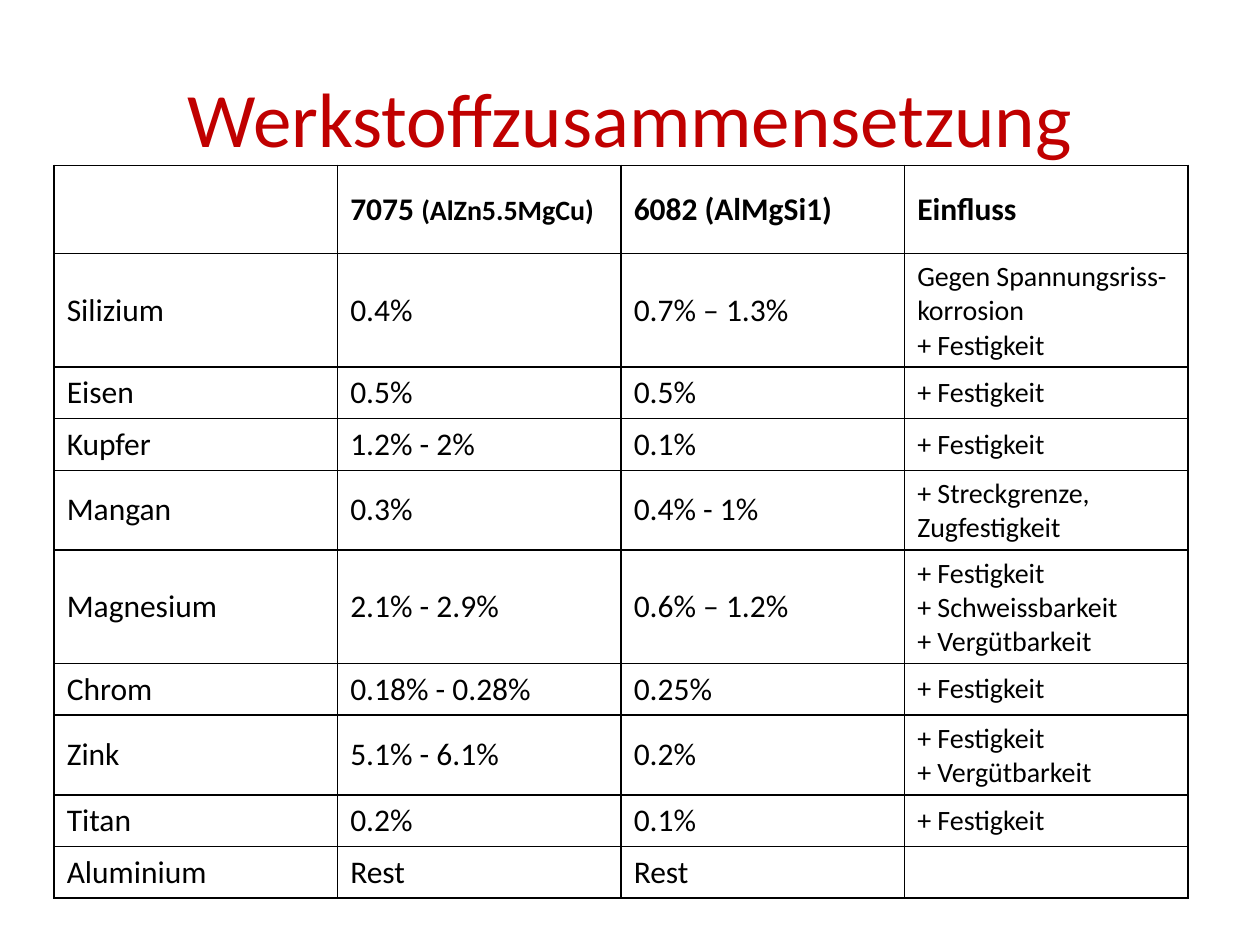
from dataclasses import dataclass

from lxml.etree import SubElement
from pptx import Presentation
from pptx.dml.color import RGBColor
from pptx.enum.text import MSO_ANCHOR, PP_ALIGN
from pptx.oxml import parse_xml
from pptx.oxml.ns import qn
from pptx.util import Inches, Pt


@dataclass(frozen=True)
class Theme:
    font: str = "Calibri"
    ink: str = "000000"
    red: str = "C00000"
    title: int = 44
    body: int = 18
    small: int = 16
    rule: int = 1


THEME = Theme()
WIDTH, HEIGHT = Inches(10), Inches(7.5)
TITLE = "Werkstoffzusammensetzung"
HEADS = ["", [("7075 ", THEME.body), ("(AlZn5.5MgCu)", THEME.small)],
         "6082 (AlMgSi1)", "Einfluss"]
METALS = [
    ("Silizium", "0.4%", "0.7% – 1.3%", "Gegen Spannungsriss-korrosion\n+ Festigkeit"),
    ("Eisen", "0.5%", "0.5%", "+ Festigkeit"),
    ("Kupfer", "1.2% - 2%", "0.1%", "+ Festigkeit"),
    ("Mangan", "0.3%", "0.4% - 1%", "+ Streckgrenze, Zugfestigkeit"),
    ("Magnesium", "2.1% - 2.9%", "0.6% – 1.2%",
     "+ Festigkeit\n+ Schweissbarkeit\n+ Vergütbarkeit"),
    ("Chrom", "0.18% - 0.28%", "0.25%", "+ Festigkeit"),
    ("Zink", "5.1% - 6.1%", "0.2%", "+ Festigkeit\n+ Vergütbarkeit"),
    ("Titan", "0.2%", "0.1%", "+ Festigkeit"),
    ("Aluminium", "Rest", "Rest", ""),
]
SHADOW = (
    '<a:effectLst xmlns:a="http://schemas.openxmlformats.org/drawingml/2006/main">'
    '<a:outerShdw blurRad="38100" dist="38100" dir="2700000" algn="tl">'
    '<a:srgbClr val="000000"><a:alpha val="43000"/></a:srgbClr>'
    '</a:outerShdw></a:effectLst>'
)


def share(x, y, w, h):
    """Turn shares of the slide's size into a box."""
    return [round(v) for v in (x * WIDTH, y * HEIGHT, w * WIDTH, h * HEIGHT)]


def write(frame, text, size=THEME.body, color=THEME.ink, bold=False,
          align=PP_ALIGN.LEFT, shadow=False):
    """Fill a frame with lines of text, or with one line of (text, size) runs."""
    frame.word_wrap = True
    lines = ([[(line, size)] for line in text.split("\n")]
             if isinstance(text, str) else [text])
    for i, line in enumerate(lines):
        para = frame.add_paragraph() if i else frame.paragraphs[0]
        para.alignment = align
        for words, points in line:
            if not words:
                continue
            run = para.add_run()
            run.text = words
            font = run.font
            font.size, font.bold = Pt(points), bold
            font.color.rgb = RGBColor.from_string(color)
            font.name = THEME.font
            if shadow:
                fill = font._element.find(qn("a:solidFill"))
                fill.addnext(parse_xml(SHADOW))


def border(cell):
    props = cell._tc.get_or_add_tcPr()
    for side in ("lnL", "lnR", "lnT", "lnB"):
        line = SubElement(props, qn(f"a:{side}"), w=str(Pt(THEME.rule)))
        fill = SubElement(line, qn("a:solidFill"))
        SubElement(fill, qn("a:srgbClr"), val=THEME.ink)


def heading(slide, box):
    frame = slide.shapes.add_textbox(*box).text_frame
    frame.vertical_anchor = MSO_ANCHOR.MIDDLE
    write(frame, TITLE, size=THEME.title, color=THEME.red,
          align=PP_ALIGN.CENTER, shadow=True)


def alloys(slide, box, head, row):
    """Place the table; rows grow with their text from the given heights."""
    data = [HEADS, *METALS]
    cols = len(HEADS)
    table = slide.shapes.add_table(len(data), cols, *box).table
    table.first_row = table.horz_banding = False
    for col in table.columns:
        col.width = box[2] // cols
    for r, items in enumerate(data):
        table.rows[r].height = row if r else head
        for c, text in enumerate(items):
            cell = table.cell(r, c)
            cell.vertical_anchor = MSO_ANCHOR.MIDDLE
            border(cell)
            cell.fill.background()
            effect = r > 0 and c == cols - 1
            write(cell.text_frame, text, bold=r == 0,
                  size=THEME.small if effect else THEME.body)


def main():
    deck = Presentation()
    deck.slide_width, deck.slide_height = WIDTH, HEIGHT
    slide = deck.slides.add_slide(deck.slide_layouts[6])
    heading(slide, share(0.05, 0.04, 0.9, 1 / 6))
    alloys(slide, share(0.043, 0.175, 0.9, 0.77), head=Inches(0.7), row=Inches(0.41))
    deck.save("out.pptx")


if __name__ == "__main__":
    main()
